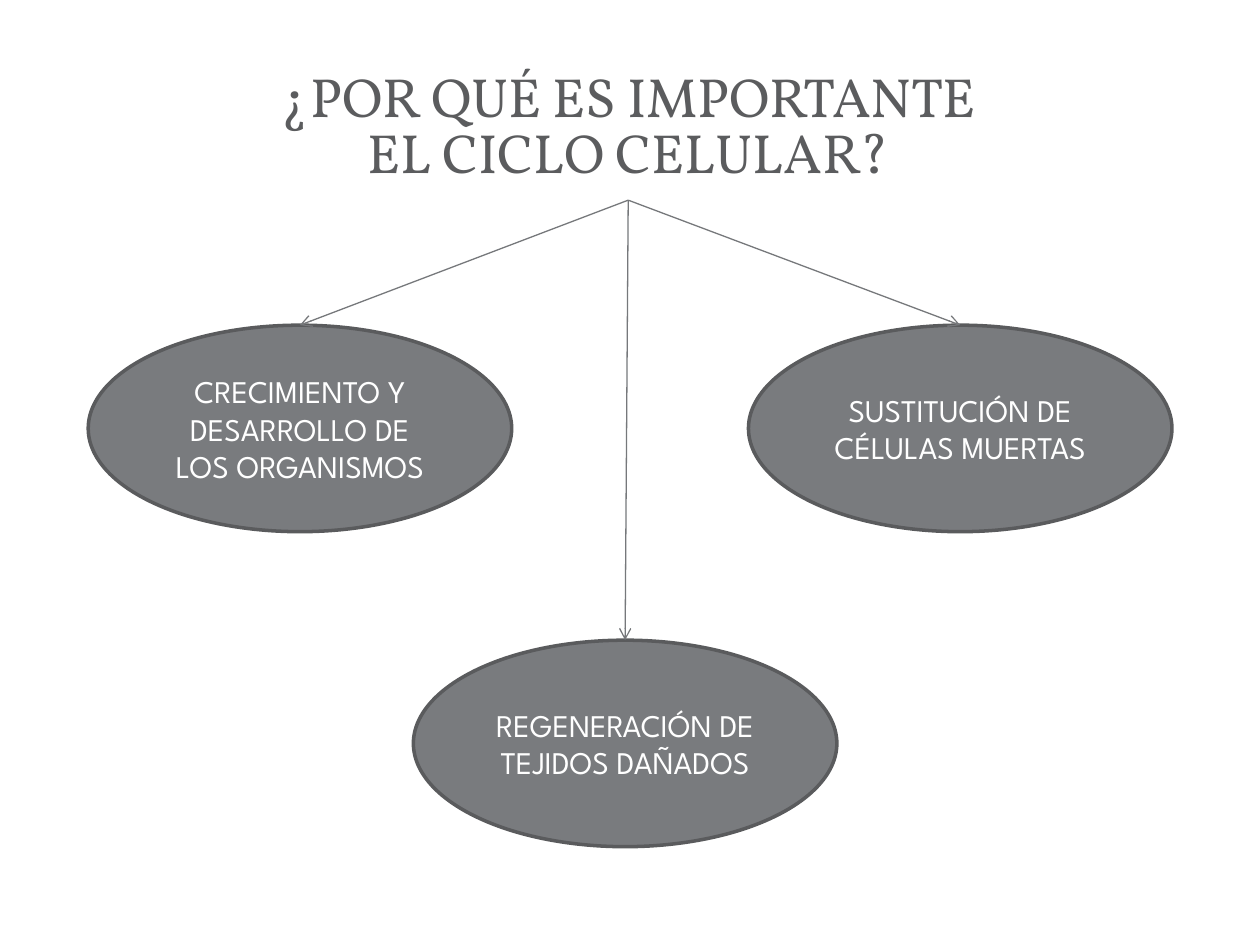
from dataclasses import dataclass
from pptx import Presentation
from pptx.dml.color import RGBColor as Rgb
from pptx.enum.shapes import MSO_CONNECTOR as Conn, MSO_SHAPE as Kind
from pptx.enum.text import MSO_ANCHOR as Anchor, PP_ALIGN as Align
from pptx.oxml.ns import qn
from pptx.util import Pt
from lxml.etree import SubElement as Sub


@dataclass(frozen=True)
class Theme:
    """Hold the colours, fonts and sizes of the slide."""
    ink: Rgb = Rgb(0x5B, 0x5C, 0x5E)
    fill: Rgb = Rgb(0x79, 0x7B, 0x7E)
    edge: Rgb = Rgb(0x5A, 0x5B, 0x5D)
    link: Rgb = Rgb(0x76, 0x78, 0x7B)
    white: Rgb = Rgb(0xFF, 0xFF, 0xFF)
    serif: str = "Vollkorn"
    sans: str = "League Spartan"
    head: float = 31.5
    body: float = 18


THEME = Theme()
REASONS = [
    ("CRECIMIENTO Y DESARROLLO DE LOS ORGANISMOS", 50.4, 185.8),
    ("REGENERACIÓN DE TEJIDOS DAÑADOS", 236.2, 365.8),
    ("SUSTITUCIÓN DE CÉLULAS MUERTAS", 427.7, 185.8),
]


def set_text(shape, text, face, size, color):
    """Write centred text in one font."""
    frame = shape.text_frame
    frame.word_wrap = True
    frame.vertical_anchor = Anchor.MIDDLE
    para = frame.paragraphs[0]
    para.text = text
    para.alignment = Align.CENTER
    font = para.font
    font.name, font.size, font.color.rgb = face, Pt(size), color


def add_title(slide, text):
    """Place and format the title placeholder."""
    title = slide.shapes.title
    title.left, title.top = Pt(34), Pt(32.4)
    title.width, title.height = Pt(650), Pt(82)
    set_text(title, text, THEME.serif, THEME.head, THEME.ink)
    title.text_frame.paragraphs[0].line_spacing = 0.85
    return title


def add_oval(slide, text, left, top):
    """Draw one reason as an oval."""
    oval = slide.shapes.add_shape(Kind.OVAL, Pt(left), Pt(top), Pt(242), Pt(118))
    oval.shadow.inherit = False
    oval.fill.solid()
    oval.fill.fore_color.rgb = THEME.fill
    oval.line.color.rgb = THEME.edge
    oval.line.width = Pt(2)
    set_text(oval, text, THEME.sans, THEME.body, THEME.white)
    return oval


def add_arrow(slide, start, end):
    """Join the bottom of one shape to the top of another."""
    arrow = slide.shapes.add_connector(Conn.STRAIGHT, 0, 0, 0, 0)
    arrow.begin_connect(start, 2)
    arrow.end_connect(end, 0)
    arrow.line.color.rgb = THEME.link
    arrow.line.width = Pt(0.75)
    Sub(arrow.line._get_or_add_ln(), qn("a:tailEnd"), type="arrow")
    Sub(arrow._element.spPr, qn("a:effectLst"))


def main():
    """Build and save the slide."""
    deck = Presentation()
    deck.slide_width, deck.slide_height = Pt(720), Pt(540)
    slide = deck.slides.add_slide(deck.slide_layouts[5])
    title = add_title(slide, "¿POR QUÉ ES IMPORTANTE\vEL CICLO CELULAR?")
    ovals = [add_oval(slide, *reason) for reason in REASONS]
    for oval in ovals:
        add_arrow(slide, title, oval)
    deck.save("out.pptx")


if __name__ == "__main__":
    main()
